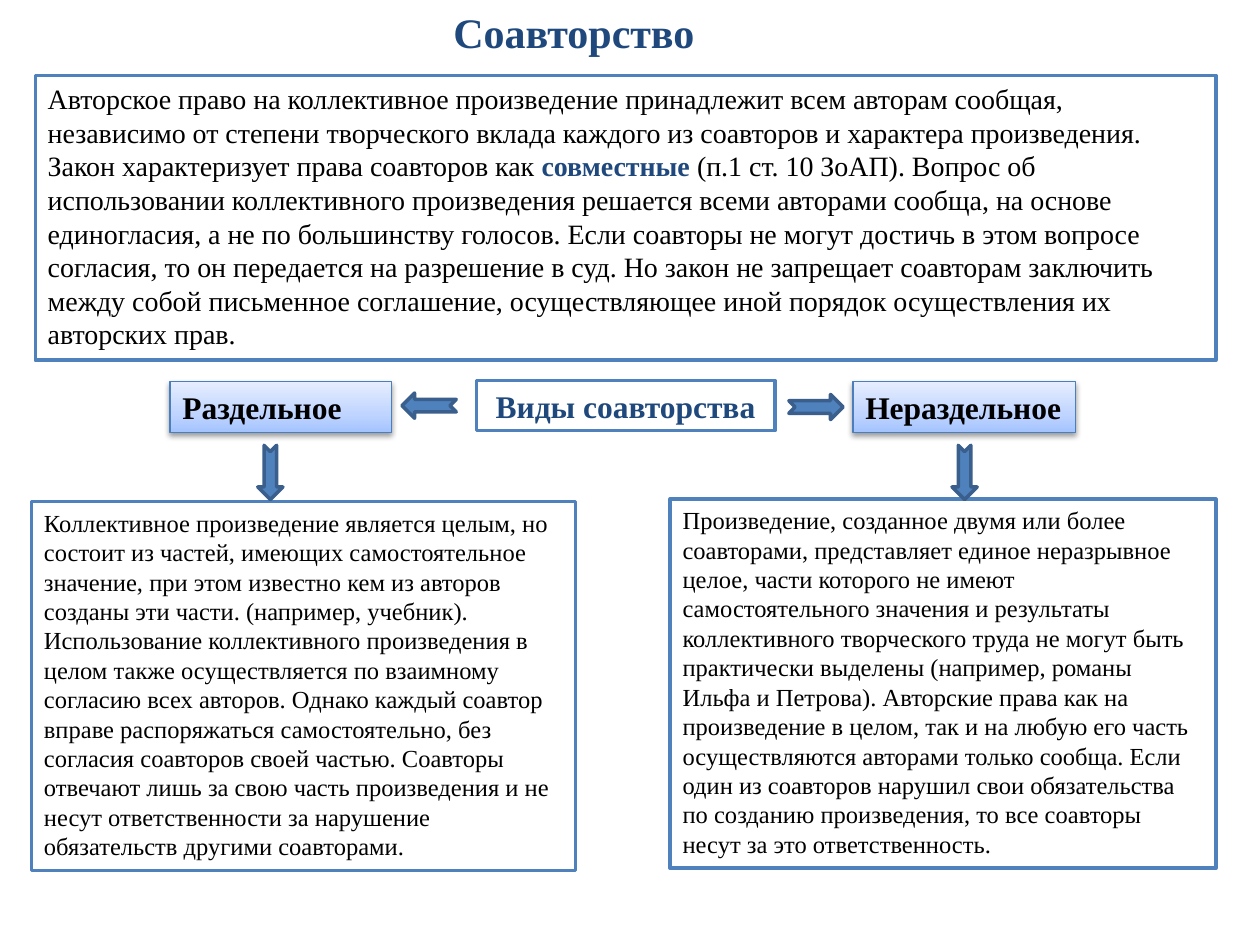
from dataclasses import dataclass

from lxml.etree import SubElement
from pptx import Presentation
from pptx.dml.color import RGBColor
from pptx.enum.shapes import MSO_SHAPE
from pptx.enum.text import MSO_ANCHOR, MSO_AUTO_SIZE, PP_ALIGN
from pptx.oxml import parse_xml
from pptx.oxml.ns import nsdecls, qn
from pptx.util import Pt


@dataclass(frozen=True)
class Theme:
    """Colours, type sizes and line widths of the slide."""
    font: str = "Times New Roman"
    ink: str = "000000"
    heading: str = "1F497D"
    paper: str = "FFFFFF"
    accent: str = "4F81BD"
    arrow_line: str = "3A5F8C"
    label_line: str = "4B7EBC"
    label_stops: tuple = ((0, "A4C4FF"), (35, "BFD4FF"), (100, "E6EEFF"))
    title_size: float = 24
    label_size: float = 18
    lead_size: float = 16
    body_size: float = 14
    frame_width: float = 2
    label_width: float = 0.75


@dataclass(frozen=True)
class Box:
    """A rectangle measured in points."""
    left: float
    top: float
    width: float
    height: float

    def inner(self, left, top, width, height):
        """Return a box placed relative to this one."""
        return Box(self.left + left, self.top + top, width, height)

    def lengths(self):
        """Return left, top, width and height as slide lengths."""
        return [Pt(value) for value in (self.left, self.top, self.width, self.height)]


THEME = Theme()
ARROW_LENGTH, ARROW_BREADTH = 31, 14.4
LABEL_HEIGHT, DETAIL_HEIGHT = 28.8, 211

LEAD_RUNS = (
    ("Авторское право на коллективное произведение принадлежит всем авторам сообщая, "
     "независимо от степени творческого вклада каждого из соавторов и характера "
     "произведения. Закон характеризует права соавторов как ", THEME.ink, False),
    ("совместные ", THEME.heading, True),
    ("(п.1 ст. 10 ЗоАП). Вопрос об использовании коллективного произведения решается "
     "всеми авторами сообща, на основе единогласия, а не по большинству голосов. Если "
     "соавторы не могут достичь в этом вопросе согласия, то он передается на разрешение "
     "в суд. Но закон не запрещает соавторам заключить между собой письменное "
     "соглашение, осуществляющее иной порядок осуществления их авторских прав.",
     THEME.ink, False),
)
SEPARATE_TEXT = (
    "Коллективное произведение является целым, но состоит из частей, имеющих "
    "самостоятельное значение, при этом известно кем из авторов созданы эти части. "
    "(например, учебник). Использование коллективного произведения в целом также "
    "осуществляется по взаимному согласию всех авторов. Однако каждый соавтор вправе "
    "распоряжаться самостоятельно, без согласия соавторов своей частью. Соавторы отвечают "
    "лишь за свою часть произведения и не несут ответственности за нарушение обязательств "
    "другими соавторами.")
JOINT_TEXT = (
    "Произведение, созданное двумя или более соавторами, представляет единое неразрывное "
    "целое, части которого не имеют самостоятельного значения и результаты коллективного "
    "творческого труда не могут быть практически выделены (например, романы Ильфа и "
    "Петрова). Авторские права как на произведение в целом, так и на любую его часть "
    "осуществляются авторами только сообща. Если один из соавторов нарушил свои "
    "обязательства по созданию произведения, то все соавторы несут за это ответственность.")


def write_text(shape, runs, size, wrap=True, alignment=PP_ALIGN.LEFT):
    """Fill a shape with one paragraph of (text, colour, bold) runs."""
    frame = shape.text_frame
    frame.word_wrap = wrap
    frame.auto_size = MSO_AUTO_SIZE.SHAPE_TO_FIT_TEXT
    frame.vertical_anchor = MSO_ANCHOR.TOP
    paragraph = frame.paragraphs[0]
    paragraph.alignment = alignment
    for text, colour, bold in runs:
        run = paragraph.add_run()
        run.text = text
        run.font.name = THEME.font
        run.font.size = Pt(size)
        run.font.bold = bold
        run.font.color.rgb = RGBColor.from_string(colour)


def add_block(slide, kind, box, fill, line, width=THEME.frame_width):
    """Add a flat preset shape with a solid fill and an outline."""
    shape = slide.shapes.add_shape(kind, *box.lengths())
    shape.fill.solid()
    shape.fill.fore_color.rgb = RGBColor.from_string(fill)
    shape.line.color.rgb = RGBColor.from_string(line)
    shape.line.width = Pt(width)
    shape.shadow.inherit = False
    return shape


def add_frame(slide, box, runs, size, **text_options):
    """Add a white outlined text frame."""
    shape = add_block(slide, MSO_SHAPE.RECTANGLE, box, THEME.paper, THEME.accent)
    write_text(shape, runs, size, **text_options)


def add_arrow(slide, box, rotation=0):
    """Add a notched arrow turned clockwise by the given degrees."""
    shape = add_block(slide, MSO_SHAPE.NOTCHED_RIGHT_ARROW, box, THEME.accent, THEME.arrow_line)
    shape.rotation = rotation


def add_label(slide, box, text, wrap):
    """Add a gradient label with a soft shadow."""
    shape = add_block(slide, MSO_SHAPE.RECTANGLE, box, THEME.paper,
                      THEME.label_line, THEME.label_width)
    stops = "".join(f'<a:gs pos="{position * 1000}"><a:srgbClr val="{colour}"/></a:gs>'
                    for position, colour in THEME.label_stops)
    gradient = parse_xml(f'<a:gradFill {nsdecls("a")} rotWithShape="1"><a:gsLst>{stops}</a:gsLst>'
                         '<a:lin ang="16200000" scaled="1"/></a:gradFill>')
    properties = shape.element.spPr
    properties.replace(properties.find(qn("a:solidFill")), gradient)
    shadow = SubElement(properties.find(qn("a:effectLst")), qn("a:outerShdw"),
                        blurRad="40000", dist="20000", dir="5400000", rotWithShape="0")
    colour = SubElement(shadow, qn("a:srgbClr"), val=THEME.ink)
    SubElement(colour, qn("a:alpha"), val="38000")
    write_text(shape, [(text, THEME.ink, True)], THEME.label_size, wrap)


def add_title(slide, box):
    """Add the slide title."""
    shape = slide.shapes.add_textbox(*box.lengths())
    write_text(shape, [("Соавторство", THEME.heading, True)], THEME.title_size, wrap=False)


def add_kinds(slide, box):
    """Add the central heading with an arrow to each side."""
    add_frame(slide, box, [("Виды соавторства", THEME.heading, True)], THEME.label_size,
              wrap=False, alignment=PP_ALIGN.CENTER)
    add_arrow(slide, box.inner(-42.5, 7.2, ARROW_LENGTH, ARROW_BREADTH), 180)
    add_arrow(slide, box.inner(box.width + 8, 8, ARROW_LENGTH, ARROW_BREADTH))


def add_branch(slide, box, label, label_left, label_width, arrow_left, detail, wrap):
    """Add a column with a label, a down arrow and its explanation."""
    add_label(slide, box.inner(label_left, 0, label_width, LABEL_HEIGHT), label, wrap)
    add_frame(slide, box.inner(0, box.height - DETAIL_HEIGHT, box.width, DETAIL_HEIGHT),
              [(detail, THEME.ink, False)], THEME.body_size)
    add_arrow(slide, box.inner(arrow_left, 44.6, ARROW_LENGTH, ARROW_BREADTH), 90)


def main():
    """Build and save the slide."""
    presentation = Presentation()
    presentation.slide_width, presentation.slide_height = Pt(720), Pt(540)
    slide = presentation.slides.add_slide(presentation.slide_layouts[6])
    add_frame(slide, Box(20.2, 43.2, 674.6, 162.7), LEAD_RUNS, THEME.lead_size)
    add_title(slide, Box(252, 0, 153.4, 36))
    add_kinds(slide, Box(272.2, 217.4, 170.6, LABEL_HEIGHT))
    add_branch(slide, Box(18, 218.2, 311, 279.4), "Раздельное", 79.2, 126.7, 121,
               SEPARATE_TEXT, True)
    add_branch(slide, Box(383, 218.2, 311.8, 278), "Нераздельное", 104.4, 127.4, 152.7,
               JOINT_TEXT, False)
    presentation.save("out.pptx")


if __name__ == "__main__":
    main()
